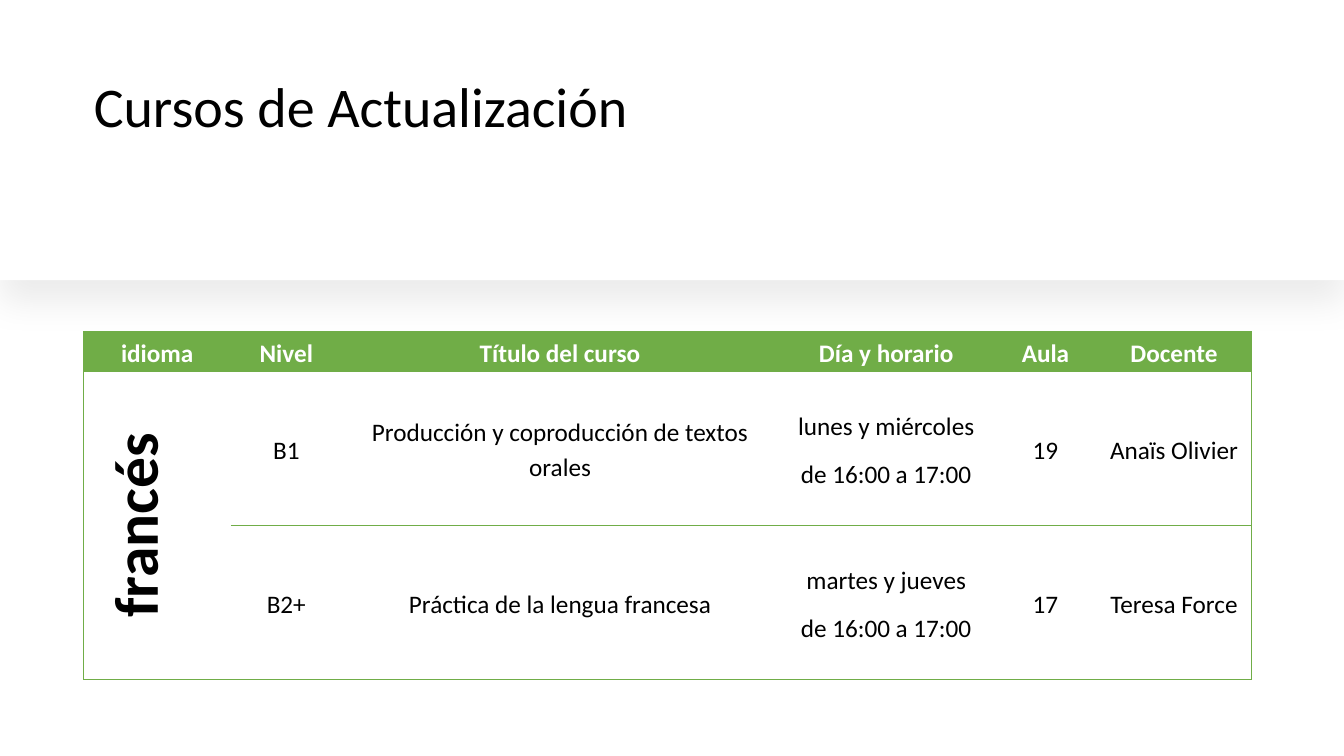
from lxml import etree
from pptx import Presentation
from pptx import util as u
from pptx.dml.color import RGBColor
from pptx.enum import shapes, text
from pptx.oxml import parse_xml
from pptx.oxml.ns import nsdecls, qn

GREEN, WHITE, BLACK = "70AD47", "FFFFFF", "000000"
PLAIN = "{2D5ABB26-0587-4C30-8999-92F81FD0307C}"
COLS = [1.46, 1.1, 4.33, 2.14, 1.02, 1.53]
ROWS = [0.39, 1.53, 1.53]
CELLS = [
    ["idioma", "Nivel", "Título del curso", "Día y horario", "Aula", "Docente"],
    ["francés", "B1", "Producción y coproducción de textos orales",
     "lunes y miércoles\nde 16:00 a 17:00", "19", "Anaïs Olivier"],
    ["", "B2+", "Práctica de la lengua francesa",
     "martes y jueves\nde 16:00 a 17:00", "17", "Teresa Force"],
]


def paint(fmt, color):
    fmt.solid()
    fmt.fore_color.rgb = RGBColor.from_string(color)


def write(frame, words, size=18, color=BLACK, bold=False,
          align=text.PP_ALIGN.CENTER, line=1.14, after=9):
    frame.text = words
    for par in frame.paragraphs:
        par.alignment = align
        par.line_spacing = line
        par.space_before = u.Pt(0)
        par.space_after = u.Pt(after)
        for run in par.runs:
            font = run.font
            font.name, font.size, font.bold = "Calibri", u.Pt(size), bold
            font.color.rgb = RGBColor.from_string(color)


def pad(item, left, top, right, bottom):
    item.margin_left, item.margin_top = u.Inches(left), u.Inches(top)
    item.margin_right, item.margin_bottom = u.Inches(right), u.Inches(bottom)


def add_band(slide):
    band = slide.shapes.add_shape(shapes.MSO_SHAPE.RECTANGLE, 0, 0,
                                  u.Inches(13.33), u.Inches(2.78))
    paint(band.fill, WHITE)
    band.line.fill.background()
    # Soft shadow below the band
    band._element.spPr.append(parse_xml(
        f'<a:effectLst {nsdecls("a")}><a:outerShdw blurRad="{u.Pt(26)}" '
        f'dist="{u.Pt(16)}" dir="5460000"><a:srgbClr val="{BLACK}">'
        '<a:alpha val="7000"/></a:srgbClr></a:outerShdw></a:effectLst>'))
    # Send behind the title
    slide.shapes._spTree.insert(2, band._element)


def add_title(slide, words):
    title = slide.shapes.title
    title.left, title.top = u.Inches(0.83), u.Inches(0.51)
    title.width, title.height = u.Inches(10.9), u.Inches(1.77)
    frame = title.text_frame
    frame.word_wrap = True
    frame.auto_size = text.MSO_AUTO_SIZE.NONE
    frame.vertical_anchor = text.MSO_ANCHOR.MIDDLE
    pad(frame, 0.1, 0.05, 0.1, 0.66)
    write(frame, words, size=40, align=text.PP_ALIGN.LEFT, line=0.9, after=0)


def edge(cell, sides):
    props = cell._tc.get_or_add_tcPr()
    for side in sides:
        line = etree.SubElement(props, qn(f"a:ln{side}"), w=str(u.Pt(0.5)))
        fill = etree.SubElement(line, qn("a:solidFill"))
        etree.SubElement(fill, qn("a:srgbClr"), val=GREEN)


def add_grid(slide):
    frame = slide.shapes.add_table(len(ROWS), len(COLS), u.Inches(0.83),
                                   u.Inches(3.29), u.Inches(sum(COLS)),
                                   u.Inches(sum(ROWS)))
    grid = frame.table
    grid._tbl.tblPr.find(qn("a:tableStyleId")).text = PLAIN
    grid.horz_banding = False
    for col, width in zip(grid.columns, COLS):
        col.width = u.Inches(width)
    for row, height in zip(grid.rows, ROWS):
        row.height = u.Inches(height)
    lang = grid.cell(1, 0)
    lang.merge(grid.cell(2, 0))

    for r, row in enumerate(CELLS):
        for c, words in enumerate(row):
            cell = grid.cell(r, c)
            left = "L" if c == 0 else ""
            right = "R" if c == len(COLS) - 1 else ""
            edge(cell, left + right + ("B" if cell.is_spanned else "TB"))
            if r == 0:
                paint(cell.fill, GREEN)
            else:
                cell.fill.background()
            if cell.is_spanned:
                continue
            cell.vertical_anchor = text.MSO_ANCHOR.MIDDLE
            pad(cell, 0.08, 0.01, 0.08, 0)
            write(cell.text_frame, words, bold=r == 0,
                  color=WHITE if r == 0 else BLACK)

    # Language name, turned upwards over both course rows
    lang.vertical_anchor = text.MSO_ANCHOR.TOP
    pad(lang, 0.11, 0.05, 0.11, 0.05)
    write(lang.text_frame, "francés", size=44, bold=True)
    lang._tc.tcPr.set("vert", "vert270")


def main():
    deck = Presentation()
    deck.slide_width, deck.slide_height = u.Inches(13.33), u.Inches(7.5)
    slide = deck.slides.add_slide(deck.slide_layouts[5])
    paint(slide.background.fill, WHITE)
    add_band(slide)
    add_title(slide, "Cursos de Actualización")
    add_grid(slide)
    deck.save("out.pptx")


if __name__ == "__main__":
    main()
